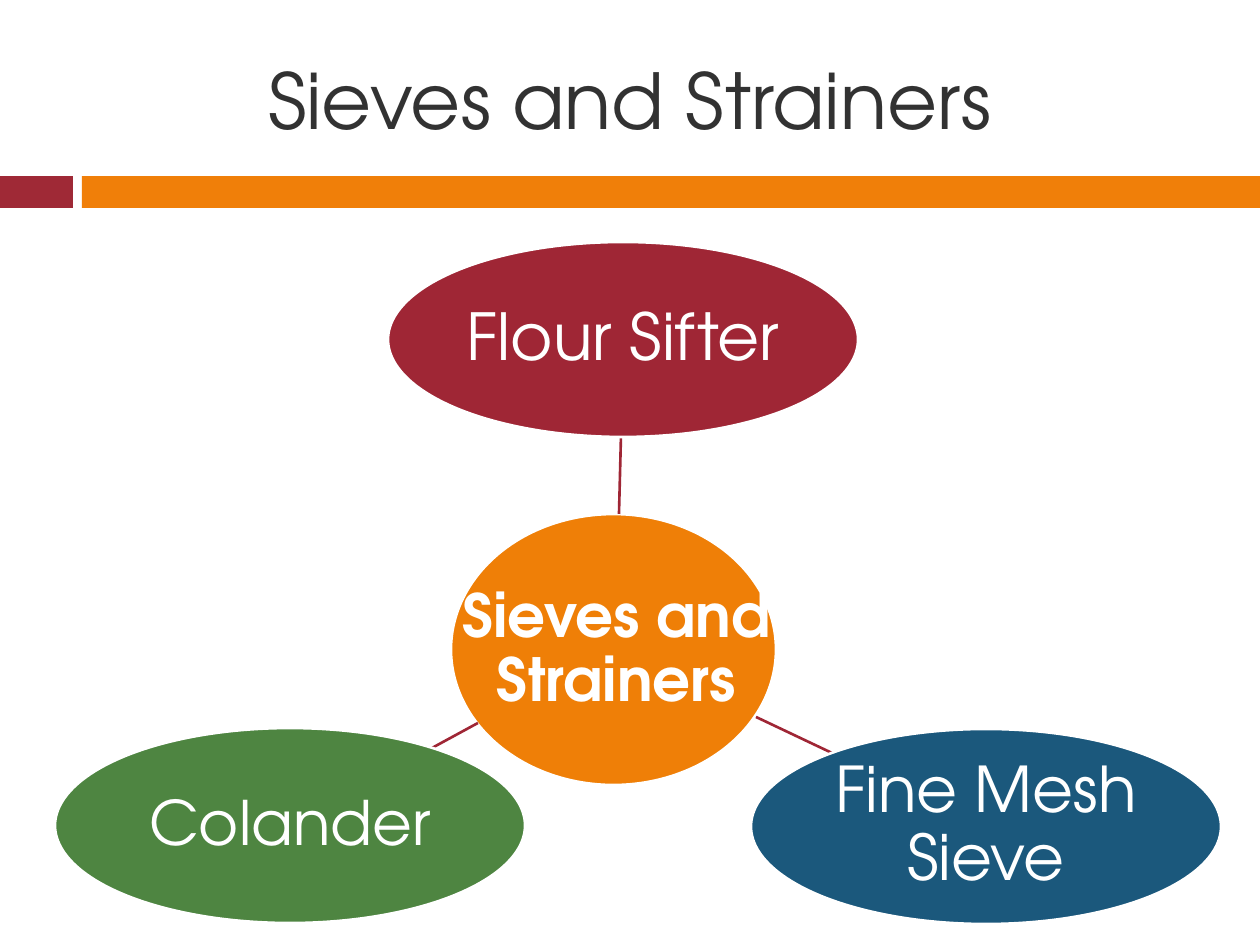
import pptx
import pptx.util
import pptx.dml.color
import pptx.enum.shapes
import pptx.enum.text
import pptx.oxml.ns
import lxml.etree

PX = pptx.util.Inches(1) / 126
SHAPE = pptx.enum.shapes.MSO_SHAPE
THEME = {
    "font": "TeX Gyre Adventor",
    "ink": "323232", "white": "FFFFFF", "red": "9F2936", "orange": "F07F09",
    "hub": "EF7F07", "spoke": "9F2635", "blue": "1B587C", "green": "4E8541",
    "title_size": 44, "hub_size": 34, "line_width": 1.5,
}


def add_figure(kind, box, fill, outline=None):
    figure = slide.shapes.add_shape(kind, *[round(v * PX) for v in box])
    figure.shadow.inherit = False
    figure.fill.solid()
    figure.fill.fore_color.rgb = pptx.dml.color.RGBColor.from_string(fill)
    if outline:
        figure.line.color.rgb = pptx.dml.color.RGBColor.from_string(outline)
        figure.line.width = pptx.util.Pt(THEME["line_width"])
    else:
        figure.line.fill.background()
    return figure


def write(holder, text, size, color, bold=False, spacing=0.9, inset=3):
    frame = holder.text_frame
    frame_format = {
        "word_wrap": True,
        "vertical_anchor": pptx.enum.text.MSO_ANCHOR.MIDDLE,
        **{f"margin_{side}": round(inset * PX) for side in ("left", "right", "top", "bottom")},
    }
    for key, value in frame_format.items():
        setattr(frame, key, value)
    paragraph = frame.paragraphs[0]
    paragraph.alignment = pptx.enum.text.PP_ALIGN.CENTER
    paragraph.line_spacing = spacing
    run = paragraph.add_run()
    run.text = text
    font_format = {"name": THEME["font"], "size": pptx.util.Pt(size), "bold": bold}
    for key, value in font_format.items():
        setattr(run.font, key, value)
    run.font.color.rgb = pptx.dml.color.RGBColor.from_string(color)


deck = pptx.Presentation()
deck.slide_width, deck.slide_height = round(1260 * PX), round(945 * PX)
slide = deck.slides.add_slide(deck.slide_layouts[6])

# Title and the two-part band below it
add_figure(SHAPE.RECTANGLE, (0, 176, 73, 32), THEME["red"])
add_figure(SHAPE.RECTANGLE, (82, 176, 1178, 32), THEME["orange"])
title = slide.shapes.add_textbox(*[round(v * PX) for v in (0, 31, 1260, 136)])
write(title, "Sieves and Strainers", THEME["title_size"], THEME["ink"], spacing=1.0, inset=6)

# Hub; its label is wider than the text area of the oval
add_figure(SHAPE.OVAL, (451, 514, 325, 271), THEME["hub"], THEME["white"])
hub_label = slide.shapes.add_textbox(*[round(v * PX) for v in (454, 554, 325, 192)])
write(hub_label, "Sieves and Strainers", THEME["hub_size"], THEME["white"], bold=True)

# Tools around the hub, each with its spoke
tools = [
    ("Flour Sifter", 37, "spoke", (388, 242), (619, 514, 621, 436)),
    ("Fine Mesh Sieve", 36, "blue", (751, 729), (756, 717, 832, 753)),
    ("Colander", 35, "green", (55, 728), (478, 723, 432, 748)),
]
for name, size, color, corner, ends in tools:
    spoke = slide.shapes.add_connector(
        pptx.enum.shapes.MSO_CONNECTOR.STRAIGHT, *[round(v * PX) for v in ends])
    spoke.line.color.rgb = pptx.dml.color.RGBColor.from_string(THEME["spoke"])
    spoke.line.width = pptx.util.Pt(THEME["line_width"])
    lxml.etree.SubElement(spoke._element.spPr, pptx.oxml.ns.qn("a:effectLst"))
    oval = add_figure(SHAPE.OVAL, (*corner, 470, 195), THEME[color], THEME["white"])
    write(oval, name, size, THEME["white"])

deck.save("out.pptx")
